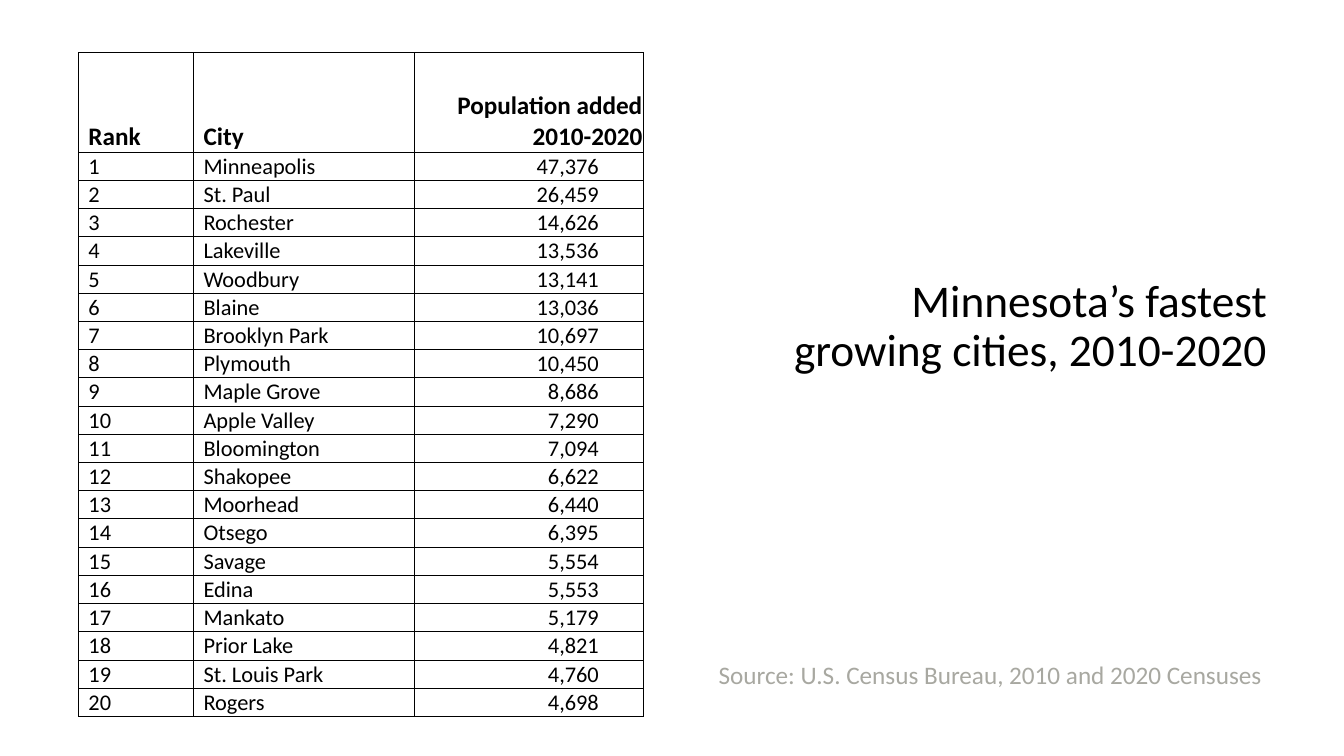
"""Build a slide ranking Minnesota's fastest growing cities."""
import dataclasses

import lxml.etree
import pptx
import pptx.dml.color
import pptx.enum.text
import pptx.oxml.ns
import pptx.util

Cm = pptx.util.Cm
Align = pptx.enum.text.PP_ALIGN
Anchor = pptx.enum.text.MSO_ANCHOR

FONT = "Calibri"
BLACK = "000000"
GREY = "A8A8A1"
THIN = Cm(0.02)


@dataclasses.dataclass
class City:
    name: str
    added: int


@dataclasses.dataclass
class Column:
    heading: str
    width: float
    align: Align
    left_inset: float
    right_inset: float


@dataclasses.dataclass
class Caption:
    text: str
    left: float
    top: float
    width: float
    height: float
    size: float
    color: str
    align: Align
    anchor: Anchor
    line_spacing: float


COLUMNS = [
    Column("Rank", 2.9, Align.LEFT, 0.25, 0.02),
    Column("City", 5.55, Align.LEFT, 0.25, 0.02),
    Column("Population added 2010-2020", 5.78, Align.RIGHT, 0.02, 1.12),
]

CITIES = [
    City("Minneapolis", 47376),
    City("St. Paul", 26459),
    City("Rochester", 14626),
    City("Lakeville", 13536),
    City("Woodbury", 13141),
    City("Blaine", 13036),
    City("Brooklyn Park", 10697),
    City("Plymouth", 10450),
    City("Maple Grove", 8686),
    City("Apple Valley", 7290),
    City("Bloomington", 7094),
    City("Shakopee", 6622),
    City("Moorhead", 6440),
    City("Otsego", 6395),
    City("Savage", 5554),
    City("Edina", 5553),
    City("Mankato", 5179),
    City("Prior Lake", 4821),
    City("St. Louis Park", 4760),
    City("Rogers", 4698),
]

CAPTIONS = [
    Caption("Minnesota’s fastest growing cities, 2010-2020", 19.58, 6.99, 12.6, 2.54,
            32.4, BLACK, Align.RIGHT, Anchor.MIDDLE, 0.9),
    Caption("Source: U.S. Census Bureau, 2010 and 2020 Censuses", 17.86, 16.48, 14.73, 1.02,
            18, GREY, Align.LEFT, Anchor.TOP, 1.0),
]


def rgb(color: str) -> pptx.dml.color.RGBColor:
    return pptx.dml.color.RGBColor.from_string(color)


def write(frame, text: str, *, size: float, color: str = BLACK, bold: bool = False,
          align: Align = Align.LEFT, line_spacing: float = 1.0) -> None:
    para = frame.paragraphs[0]
    para.alignment = align
    para.line_spacing = line_spacing
    span = para.add_run()
    span.text = text
    span.font.name = FONT
    span.font.size = pptx.util.Pt(size)
    span.font.bold = bold
    span.font.color.rgb = rgb(color)


def add_borders(cell, color: str = BLACK, width: float = 0.5) -> None:
    qn = pptx.oxml.ns.qn
    properties = cell._tc.get_or_add_tcPr()
    for side in ("lnL", "lnR", "lnT", "lnB"):
        line = lxml.etree.SubElement(properties, qn(f"a:{side}"), w=str(pptx.util.Pt(width)))
        fill = lxml.etree.SubElement(line, qn("a:solidFill"))
        lxml.etree.SubElement(fill, qn("a:srgbClr"), val=color)


def fill_cell(cell, column: Column, text: str, *, heading: bool) -> None:
    cell.margin_left = Cm(column.left_inset)
    cell.margin_right = THIN if heading else Cm(column.right_inset)
    cell.margin_top = THIN
    cell.margin_bottom = 0
    cell.vertical_anchor = Anchor.BOTTOM
    add_borders(cell)
    cell.fill.background()
    write(cell.text_frame, text, size=18 if heading else 16, bold=heading, align=column.align)


def add_ranking(page) -> None:
    rows = [[column.heading for column in COLUMNS]]
    rows += [[str(rank), city.name, f"{city.added:,}"] for rank, city in enumerate(CITIES, 1)]
    heights = [2.51] + [0.66] * len(CITIES)
    table = page.shapes.add_table(
        len(rows), len(COLUMNS), Cm(1.98), Cm(1.32),
        Cm(sum(column.width for column in COLUMNS)), Cm(sum(heights))).table
    table.first_row = False
    table.horz_banding = False
    for index, column in enumerate(COLUMNS):
        table.columns[index].width = Cm(column.width)
    for row_index, (texts, height) in enumerate(zip(rows, heights)):
        table.rows[row_index].height = Cm(height)
        for index, (column, text) in enumerate(zip(COLUMNS, texts)):
            fill_cell(table.cell(row_index, index), column, text, heading=row_index == 0)


def add_caption(page, caption: Caption) -> None:
    box = page.shapes.add_textbox(
        Cm(caption.left), Cm(caption.top), Cm(caption.width), Cm(caption.height))
    frame = box.text_frame
    frame.word_wrap = True
    frame.vertical_anchor = caption.anchor
    write(frame, caption.text, size=caption.size, color=caption.color,
          align=caption.align, line_spacing=caption.line_spacing)


def main() -> None:
    deck = pptx.Presentation()
    deck.slide_width = Cm(33.87)
    deck.slide_height = Cm(19.05)
    page = deck.slides.add_slide(deck.slide_layouts[6])
    add_ranking(page)
    for caption in CAPTIONS:
        add_caption(page, caption)
    deck.save("out.pptx")


if __name__ == "__main__":
    main()
